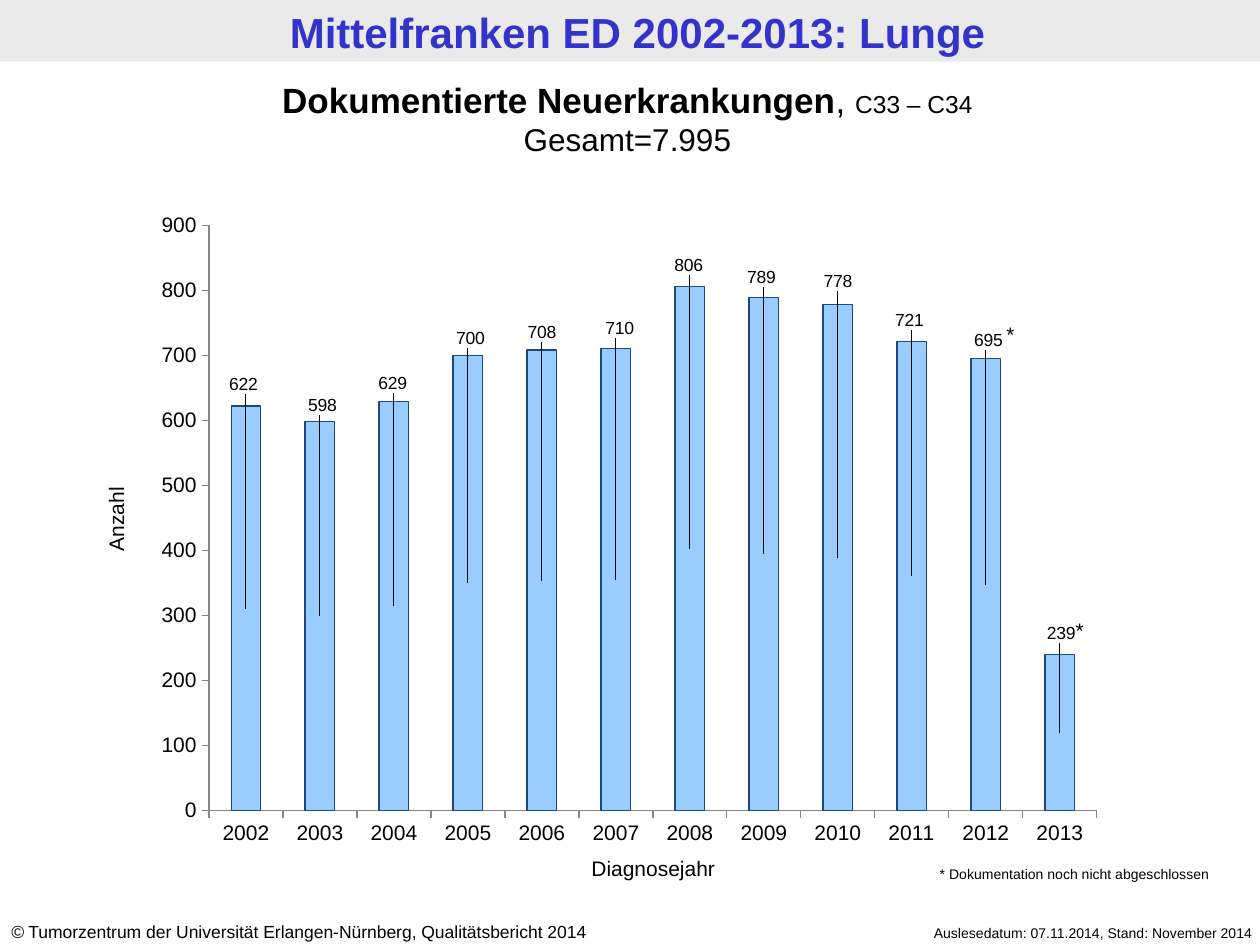
import pptx
import pptx.chart.data
import pptx.dml.color
import pptx.enum.chart
import pptx.enum.shapes
import pptx.enum.text
import pptx.util
from lxml import etree
from pptx.util import Inches, Pt

COLORS = {"band": "EAEAEA", "title": "3333CC", "text": "000000",
          "bar": "99CCFF", "bar_line": "1F497D", "axis": "868686"}
ALIGN = pptx.enum.text.PP_ALIGN


def rgb(name):
    return pptx.dml.color.RGBColor.from_string(COLORS[name])


def add_text(at, lines, align):
    """Add a text box; each line is a list of (text, size, bold, italic) runs."""
    sp = s.shapes.add_textbox(*map(Inches, at))
    tf = sp.text_frame
    tf.word_wrap = True
    for i, runs in enumerate(lines):
        p = tf.paragraphs[0] if i == 0 else tf.add_paragraph()
        p.alignment = align
        p.font.name = "Arial"
        p.font.color.rgb = rgb("text")
        p.font.size = Pt(runs[0][1])
        for text, size, bold, italic in runs:
            r = p.add_run()
            r.text = text
            r.font.size = Pt(size)
            r.font.bold = bold
            r.font.italic = italic
    return sp


prs = pptx.Presentation()
prs.slide_width, prs.slide_height = Inches(10), Inches(7.5)
s = prs.slides.add_slide(prs.slide_layouts[5])

# Title on a grey band
title = s.shapes.title
title.left, title.top, title.width, title.height = map(Inches, (0.06, 0.01, 10, 0.49))
tf = title.text_frame
tf.text = "Mittelfranken ED 2002-2013: Lunge"
tf.vertical_anchor = pptx.enum.text.MSO_ANCHOR.TOP
tf.margin_left = tf.margin_right = Inches(0.09)
tf.margin_top = tf.margin_bottom = Inches(0.04)
p = tf.paragraphs[0]
p.alignment = ALIGN.CENTER
p.font.name, p.font.size, p.font.bold = "Arial", Pt(24), True
p.font.color.rgb = rgb("title")

band = s.shapes.add_shape(pptx.enum.shapes.MSO_SHAPE.RECTANGLE, 0, 0, Inches(10), Inches(0.49))
band.shadow.inherit = False
band.fill.solid()
band.fill.fore_color.rgb = rgb("band")
band.line.fill.background()
title.element.addprevious(band.element)

# Chart
values = [622, 598, 629, 700, 708, 710, 806, 789, 778, 721, 695, 239]
data = pptx.chart.data.CategoryChartData()
data.categories = [str(year) for year in range(2002, 2014)]
data.add_series("Series 1", values)
chart_w, chart_h, plot_h, axis_max = 7.71, 5.14, 0.903, 900
chart = s.shapes.add_chart(pptx.enum.chart.XL_CHART_TYPE.COLUMN_STACKED, Inches(1.15),
                           Inches(1.64), Inches(chart_w), Inches(chart_h), data).chart
chart.has_legend = False
chart.has_title = False
chart.font.name, chart.font.size = "Arial", Pt(12)
chart.font.color.rgb = rgb("text")

plot = chart.plots[0]
plot.gap_width, plot.overlap = 150, 100
plot.vary_by_categories = False
for axis in (chart.category_axis, chart.value_axis):
    axis.has_major_gridlines = False
    axis.major_tick_mark = pptx.enum.chart.XL_TICK_MARK.OUTSIDE
    axis.minor_tick_mark = pptx.enum.chart.XL_TICK_MARK.NONE
    axis.format.line.color.rgb = rgb("axis")
chart.value_axis.minimum_scale, chart.value_axis.maximum_scale = 0, axis_max
chart.value_axis.major_unit = 100


def make_layout(**values):
    ns = "http://schemas.openxmlformats.org/drawingml/2006/chart"
    layout = etree.Element(f"{{{ns}}}layout")
    manual = etree.SubElement(layout, f"{{{ns}}}manualLayout")
    for tag, val in values.items():
        etree.SubElement(manual, f"{{{ns}}}{tag}").set("val", str(val))
    return layout


plot_area = chart.element.chart.plotArea
for old in plot_area.xpath("c:layout"):
    plot_area.remove(old)
plot_area.insert(0, make_layout(layoutTarget="inner", xMode="edge", yMode="edge",
                                x=0.066, y=0.029, w=0.914, h=plot_h))

series = plot.series[0]
series.format.fill.solid()
series.format.fill.fore_color.rgb = rgb("bar")
series.format.line.color.rgb = rgb("bar_line")
series.format.line.width = Pt(0.75)

# Labels move from the bar centre to above the bar: shift right and rise, in inches
shifts = [-0.02, 0.02, -0.01, 0.02, 0, 0.03, -0.01, -0.02, 0, -0.02, 0.02, 0.01]
rises = [0.17, 0.13, 0.14, 0.13, 0.14, 0.16, 0.17, 0.16, 0.18, 0.17, 0.14, 0.17]
for i, (value, shift, rise) in enumerate(zip(values, shifts, rises)):
    label = series.points[i].data_label
    label.font.name, label.font.size = "Arial", Pt(10)
    label.font.color.rgb = rgb("text")
    label.position = pptx.enum.chart.XL_LABEL_POSITION.CENTER
    up = value / 2 / axis_max * plot_h + rise / chart_h
    idx = series.points[i].data_label.font  # keeps the label element in place
    element = chart.element.xpath(f"//c:dLbl/c:idx[@val='{i}']")[0]
    element.addnext(make_layout(x=round(shift / chart_w, 4), y=round(-up, 4)))

# Texts around the chart
add_text((-0.04, 0.57, 10.04, 0.74),
         [[("Dokumentierte Neuerkrankungen", 20, True, False), (", ", 20, False, False),
           ("C33 – C34", 14, False, False)],
          [("Gesamt=7.995", 18, False, False)]], ALIGN.CENTER)
add_text((-0.01, 7.26, 5.24, 0.27),
         [[("©", 10, False, True),
           (" Tumorzentrum der Universität Erlangen-Nürnberg, Qualitätsbericht 2014",
            10, False, False)]], ALIGN.LEFT)
for at, text, size, align, rotation in [
    ((6.65, 7.29, 3.39, 0.24), "Auslesedatum: 07.11.2014, Stand: November 2014", 8, ALIGN.RIGHT, 0),
    ((4.06, 6.74, 2.25, 0.3), "Diagnosejahr", 12, ALIGN.CENTER, 0),
    ((0.31, 3.97, 1.22, 0.3), "Anzahl", 12, ALIGN.CENTER, 270),
    ((7.76, 2.5, 0.39, 0.3), "*", 12, ALIGN.RIGHT, 0),
    ((8.31, 4.85, 0.39, 0.3), "*", 12, ALIGN.RIGHT, 0),
    ((7.36, 6.82, 2.52, 0.24), "* Dokumentation noch nicht abgeschlossen", 8, ALIGN.LEFT, 0),
]:
    add_text(at, [[(text, size, False, False)]], align).rotation = rotation

prs.save("out.pptx")
